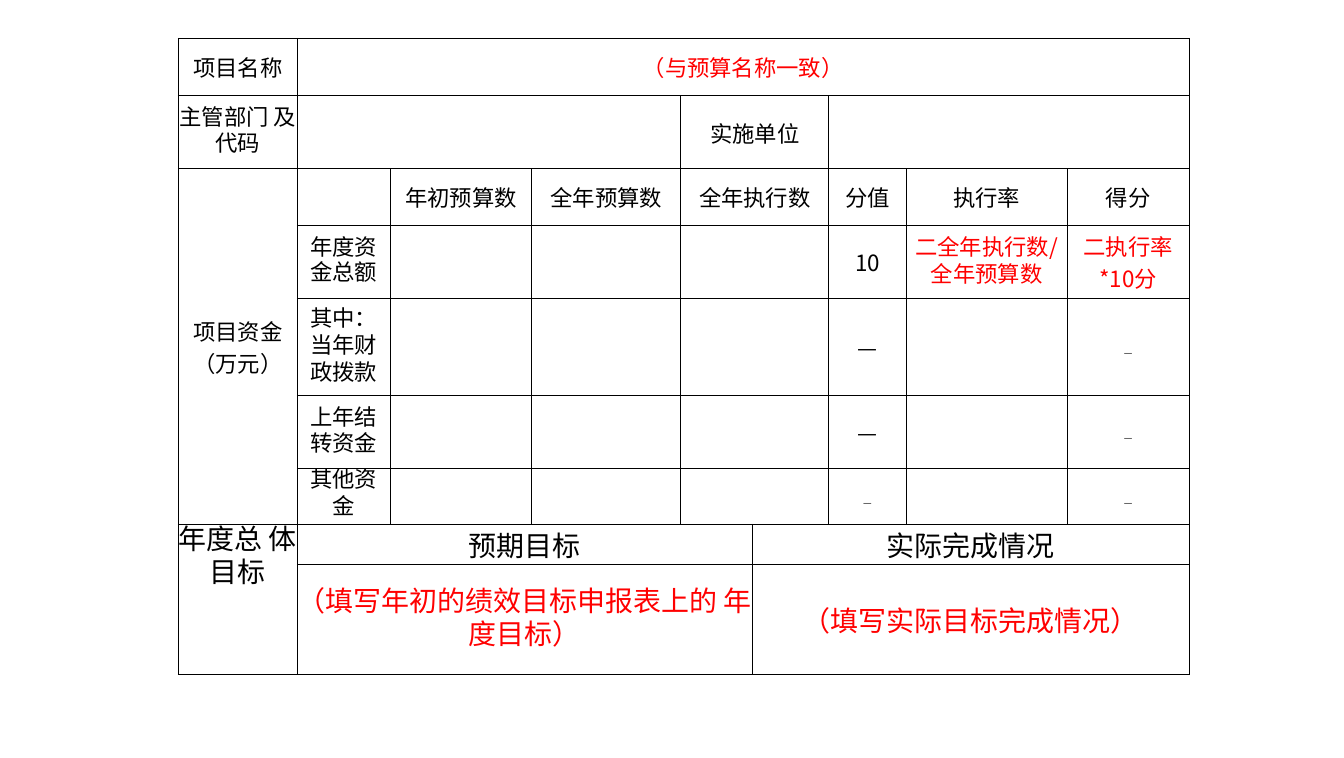
import pptx
import pptx.dml.color
import pptx.enum.text
import pptx.oxml
import pptx.oxml.ns
import pptx.util
from pptx.util import Cm

BLACK, RED = "000000", "FF0000"
ALIGN = pptx.enum.text.PP_ALIGN
ANCHOR = pptx.enum.text.MSO_ANCHOR


def rgb(hex_color):
    return pptx.dml.color.RGBColor.from_string(hex_color)


def write(cell, text, size=16, color=BLACK, font="Noto Sans CJK SC", anchor=ANCHOR.MIDDLE,
          line=None, before=None, indent_first=False, baseline=None):
    cell.vertical_anchor = anchor
    cell.text = text
    for number, paragraph in enumerate(cell.text_frame.paragraphs):
        if indent_first and number == 0:
            paragraph.alignment = ALIGN.LEFT
            paragraph._p.get_or_add_pPr().set("indent", str(Cm(0.38)))
        else:
            paragraph.alignment = ALIGN.CENTER
        if line:
            paragraph.line_spacing = pptx.util.Pt(line)
        if before:
            paragraph.space_before = pptx.util.Pt(before)
        for run in paragraph.runs:
            run.font.size = pptx.util.Pt(size)
            run.font.name = font
            run.font.color.rgb = rgb(color)
            properties = run._r.get_or_add_rPr()
            east_asian = pptx.oxml.parse_xml(
                f'<a:ea {pptx.oxml.ns.nsdecls("a")} typeface="{font}"/>')
            properties.find(pptx.oxml.ns.qn("a:latin")).addnext(east_asian)
            if baseline:
                properties.set("baseline", str(baseline))


presentation = pptx.Presentation()
presentation.slide_width, presentation.slide_height = Cm(33.91), Cm(19.13)
slide = presentation.slides.add_slide(presentation.slide_layouts[6])

# Budget table grid
column_widths = [3, 2.34, 3.58, 3.76, 1.8, 1.93, 1.95, 4.07, 3.07]
row_heights = [1.45, 1.84, 1.42, 1.84, 2.45, 1.84, 1.42, 1, 2.77]
budget = slide.shapes.add_table(
    len(row_heights), len(column_widths), Cm(4.5), Cm(0.97),
    Cm(sum(column_widths)), Cm(sum(row_heights))).table
budget.first_row = budget.horz_banding = False
for column, width in zip(budget.columns, column_widths):
    column.width = Cm(width)
for row, height in zip(budget.rows, row_heights):
    row.height = Cm(height)

# Plain cells with thin black borders
for cell in budget.iter_cells():
    cell.margin_left = cell.margin_right = cell.margin_top = cell.margin_bottom = 0
    cell.fill.background()
    for position, side in enumerate(["lnL", "lnR", "lnT", "lnB"]):
        border = pptx.oxml.parse_xml(
            f'<a:{side} {pptx.oxml.ns.nsdecls("a")} w="9525"><a:solidFill>'
            f'<a:srgbClr val="{BLACK}"/></a:solidFill></a:{side}>')
        cell._tc.get_or_add_tcPr().insert(position, border)

# Merged areas: first row, first column, last row, last column
merged_areas = [(0, 1, 0, 8), (1, 1, 1, 3), (1, 4, 1, 5), (1, 6, 1, 8), (2, 0, 6, 0), (7, 0, 8, 0)]
merged_areas += [(row, 4, row, 5) for row in range(2, 7)]
merged_areas += [(row, first, row, first + 3) for row in (7, 8) for first in (1, 5)]
for top, left, bottom, right in merged_areas:
    budget.cell(top, left).merge(budget.cell(bottom, right))

# Project name and departments
write(budget.cell(0, 0), "项目名称", indent_first=True)
write(budget.cell(0, 1), "（与预算名称一致）", color=RED)
write(budget.cell(1, 0), "主管部门 及代码", line=18.5)
write(budget.cell(1, 4), "实施单位")

# Project funds
write(budget.cell(2, 0), "项目资金\n（万元）", indent_first=True)
fund_headings = {2: "年初预算数", 3: "全年预算数", 4: "全年执行数", 6: "分值", 7: "执行率", 8: "得分"}
for column, heading in fund_headings.items():
    write(budget.cell(2, column), heading)
write(budget.cell(3, 1), "年度资 金总额", line=18.2)
write(budget.cell(4, 1), "其中： 当年财 政拨款", line=19.2)
write(budget.cell(5, 1), "上年结 转资金", line=18.9)
write(budget.cell(6, 1), "其他资 金", line=18.9, anchor=ANCHOR.TOP)
write(budget.cell(3, 6), "10")
write(budget.cell(3, 7), "二全年执行数/ 全年预算数", color=RED, line=19.9)
write(budget.cell(3, 8), "二执行率\n*10分", color=RED)

# Dashes for scores that do not apply
for row in (4, 5):
    write(budget.cell(row, 6), "—")
for row, column in [(4, 8), (5, 8), (6, 6), (6, 8)]:
    write(budget.cell(row, column), "—", size=12, font="Noto Sans CJK TC", baseline=-25000)

# Annual goals
write(budget.cell(7, 0), "年度总 体目标", size=20, anchor=ANCHOR.TOP, line=23.8, before=12.6)
write(budget.cell(7, 1), "预期目标", size=20, anchor=ANCHOR.BOTTOM)
write(budget.cell(7, 5), "实际完成情况", size=20, anchor=ANCHOR.BOTTOM)
write(budget.cell(8, 1), "（填写年初的绩效目标申报表上的 年度目标）", size=20, color=RED, line=23.8)
write(budget.cell(8, 5), "（填写实际目标完成情况）", size=20, color=RED)

presentation.save("out.pptx")
